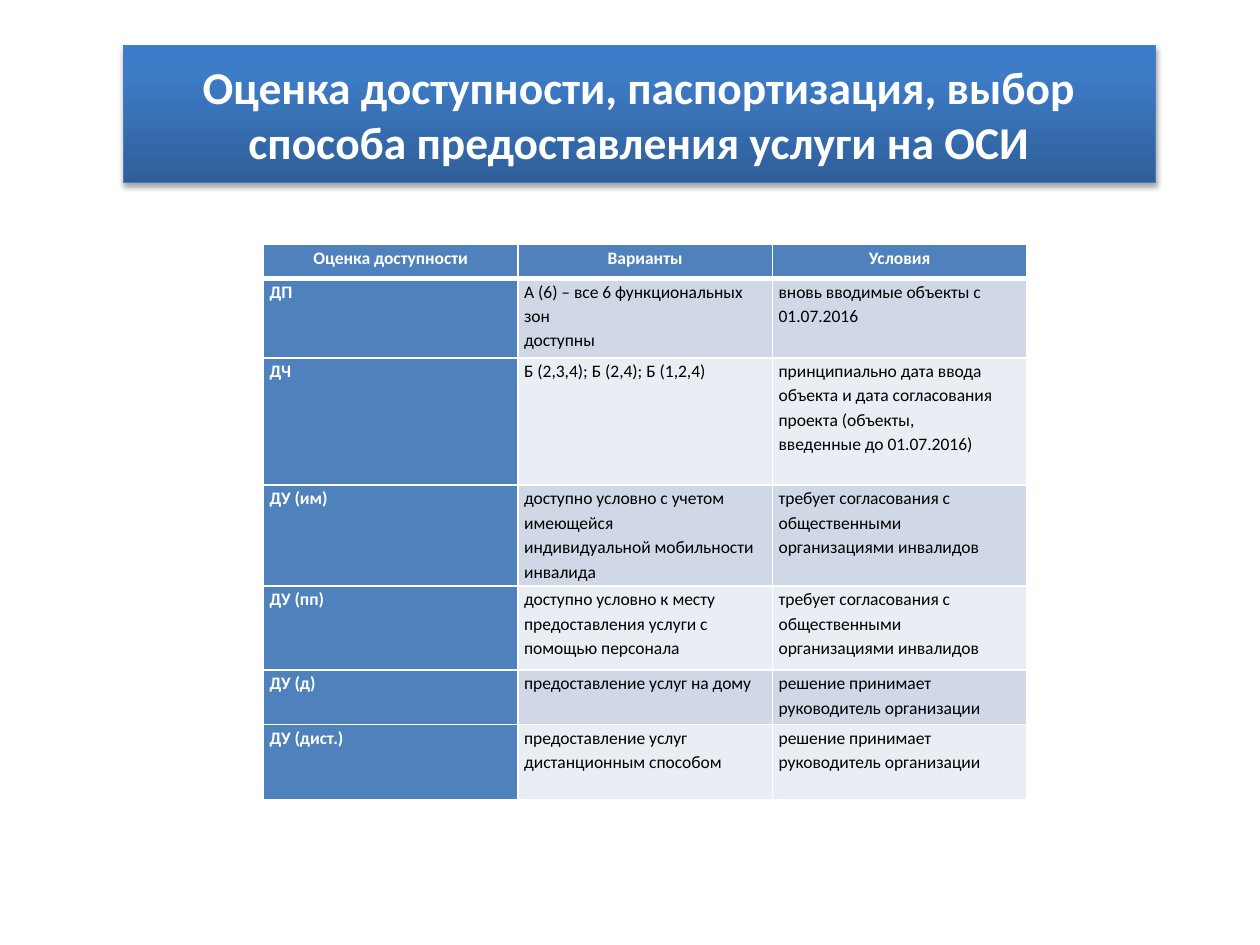
from dataclasses import dataclass

from lxml import etree
from pptx import Presentation
from pptx.dml.color import RGBColor
from pptx.enum import shapes, text
from pptx.oxml import parse_xml
from pptx.oxml.ns import qn
from pptx.util import Inches, Pt

HUES = {"white": "FFFFFF", "black": "000000", "blue": "4F81BD", "edge": "4B7EBC",
        "odd": "D0D8E8", "even": "E9EDF4",
        "low": "2F5F99", "mid": "3D7CC7", "top": "3A7CCB"}
NS = 'xmlns:a="http://schemas.openxmlformats.org/drawingml/2006/main"'
HEADS = ("Оценка доступности", "Варианты", "Условия")


@dataclass
class Row:
    """One grade of access; line feeds part paragraphs."""
    grade: str
    option: str
    terms: str
    height: float


ROWS = [
    Row("ДП", "А (6) – все 6 функциональных зон\nдоступны",
        "вновь вводимые объекты с\n01.07.2016", 0.63),
    Row("ДЧ", "Б (2,3,4); Б (2,4); Б (1,2,4)",
        "принципиально дата ввода объекта и дата согласования проекта (объекты,\n"
        "введенные до 01.07.2016)", 1.01),
    Row("ДУ (им)",
        "доступно условно с учетом имеющейся\nиндивидуальной мобильности инвалида",
        "требует согласования с общественными\nорганизациями инвалидов", 0.8),
    Row("ДУ (пп)", "доступно условно к месту предоставления услуги с помощью персонала",
        "требует согласования с общественными организациями инвалидов", 0.67),
    Row("ДУ (д)", "предоставление услуг на дому",
        "решение принимает\nруководитель организации", 0.43),
    Row("ДУ (дист.)", "предоставление услуг дистанционным способом",
        "решение принимает\nруководитель организации", 0.6),
]


def rgb(name: str) -> RGBColor:
    """Look up a colour by name."""
    return RGBColor.from_string(HUES[name])


def write(frame, words: str, size: float, hue: str, bold: bool, align, gap: float) -> None:
    """Fill a text frame with evenly styled paragraphs."""
    frame.text = words
    style = {"name": "Calibri", "size": Pt(size), "bold": bold}
    for para in frame.paragraphs:
        para.alignment, para.line_spacing = align, gap
        for run in para.runs:
            for key, value in style.items():
                setattr(run.font, key, value)
            run.font.color.rgb = rgb(hue)


def banner(slide, words: str) -> None:
    """Draw the shaded title bar."""
    bar = slide.shapes.add_shape(shapes.MSO_SHAPE.RECTANGLE, Inches(0.98), Inches(0.36),
                                 Inches(8.19), Inches(1.09))
    bar.line.color.rgb, bar.line.width = rgb("edge"), Pt(0.75)
    stops = "".join(f'<a:gs pos="{pos}000"><a:srgbClr val="{HUES[hue]}"/></a:gs>'
                    for pos, hue in ((0, "low"), (80, "mid"), (100, "top")))
    props = bar.fill._xPr
    props.find(qn("a:prstGeom")).addnext(parse_xml(
        f'<a:gradFill {NS} rotWithShape="1"><a:gsLst>{stops}</a:gsLst>'
        '<a:lin ang="16200000" scaled="0"/></a:gradFill>'))
    props.append(parse_xml(
        f'<a:effectLst {NS}><a:outerShdw blurRad="{Pt(3.1)}" dist="{Pt(1.8)}" dir="5400000" '
        f'rotWithShape="0"><a:srgbClr val="{HUES["black"]}"><a:alpha val="35000"/>'
        '</a:srgbClr></a:outerShdw></a:effectLst>'))
    bar.text_frame.word_wrap = True
    bar.text_frame.vertical_anchor = text.MSO_ANCHOR.MIDDLE
    write(bar.text_frame, words, 26, "white", True, text.PP_ALIGN.CENTER, 1.0)


def border(cell, row: int) -> None:
    """Rule a cell in white, thicker under the header."""
    widths = {"L": 1, "R": 1, "T": 3 if row == 1 else 1, "B": 3 if row == 0 else 1}
    props = cell._tc.get_or_add_tcPr()
    for spot, (side, width) in enumerate(widths.items()):
        line = etree.fromstring(
            f'<a:ln{side} {NS} w="{Pt(width)}"><a:solidFill>'
            f'<a:srgbClr val="{HUES["white"]}"/></a:solidFill></a:ln{side}>')
        props.insert(spot, line)


def paint(cell, words: str, row: int, col: int) -> None:
    """Style and fill one table cell."""
    head = row == 0 or col == 0
    pads = {"margin_left": 0.05, "margin_right": 0.05, "margin_top": 0, "margin_bottom": 0}
    for key, value in pads.items():
        setattr(cell, key, Inches(value))
    cell.fill.solid()
    cell.fill.fore_color.rgb = rgb("blue" if head else "odd" if row % 2 else "even")
    border(cell, row)
    align = text.PP_ALIGN.LEFT if row else text.PP_ALIGN.CENTER
    write(cell.text_frame, words, 10, "white" if head else "black", head, align, 1.15)


def grid(slide) -> None:
    """Build the table of grades."""
    lines = [HEADS] + [(r.grade, r.option, r.terms) for r in ROWS]
    highs = [0.27] + [r.height for r in ROWS]
    table = slide.shapes.add_table(len(lines), len(HEADS), Inches(2.09), Inches(1.94),
                                   Inches(6.06), Inches(sum(highs))).table
    for row, (line, high) in enumerate(zip(lines, highs)):
        table.rows[row].height = Inches(high)
        for col, words in enumerate(line):
            paint(table.cell(row, col), words, row, col)


def main() -> None:
    """Make the deck."""
    deck = Presentation()
    deck.slide_width, deck.slide_height = Inches(10), Inches(7.5)
    slide = deck.slides.add_slide(deck.slide_layouts[6])
    banner(slide, "Оценка доступности, паспортизация, выбор\vспособа предоставления услуги на ОСИ")
    grid(slide)
    deck.save("out.pptx")


if __name__ == "__main__":
    main()
